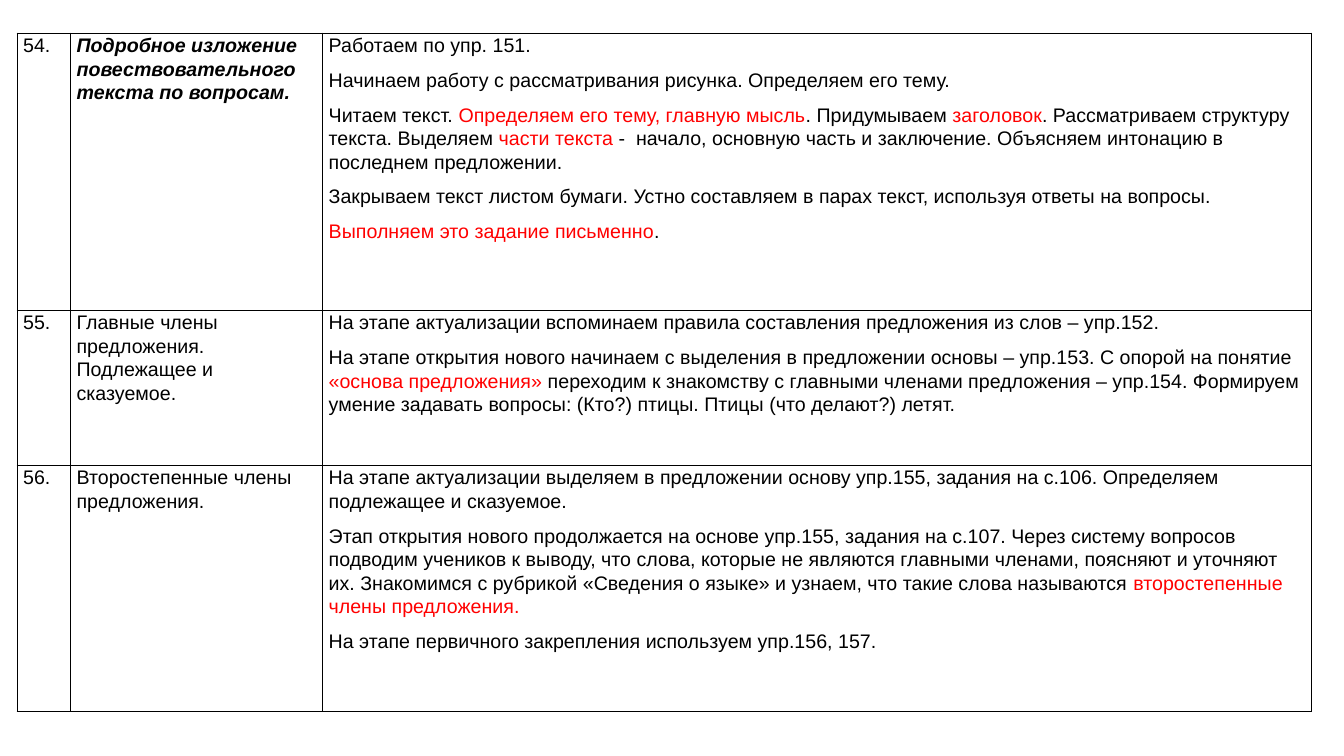
"""Build a slide with a three-row table of Russian lesson notes."""
import pptx
import pptx.dml.color
import pptx.oxml
import pptx.oxml.ns
import pptx.util
from pptx.util import Inches

BLACK = pptx.dml.color.RGBColor(0x00, 0x00, 0x00)
RED = pptx.dml.color.RGBColor(0xFF, 0x00, 0x00)
KEY_MARK = "|"

LESSONS = [
    ("54.", "Подробное изложение повествовательного текста по вопросам.", [
        "Работаем по упр. 151.",
        "Начинаем работу с рассматривания рисунка. Определяем его тему.",
        "Читаем текст. |Определяем его тему, главную мысль|. Придумываем |заголовок|. "
        "Рассматриваем структуру текста. Выделяем |части текста |-  начало, основную часть "
        "и заключение. Объясняем интонацию в последнем предложении.",
        "Закрываем текст листом бумаги. Устно составляем в парах текст, "
        "используя ответы на вопросы.",
        "|Выполняем это задание письменно|.",
    ]),
    ("55.", "Главные члены предложения. Подлежащее и сказуемое.", [
        "На этапе актуализации вспоминаем правила составления предложения из слов – упр.152.",
        "На этапе открытия нового начинаем с выделения в предложении основы – упр.153. "
        "С опорой на понятие |«основа предложения»| переходим к знакомству с главными "
        "членами предложения – упр.154. Формируем умение задавать вопросы: "
        "(Кто?) птицы. Птицы (что делают?) летят.",
    ]),
    ("56.", "Второстепенные члены предложения.", [
        "На этапе актуализации выделяем в предложении основу упр.155, задания на с.106. "
        "Определяем подлежащее и сказуемое.",
        "Этап открытия нового продолжается на основе упр.155, задания на с.107. "
        "Через систему вопросов подводим учеников к выводу, что слова, которые не являются "
        "главными членами, поясняют и уточняют их. Знакомимся с рубрикой «Сведения о языке» "
        "и узнаем, что такие слова называются |второстепенные члены предложения.",
        "На этапе первичного закрепления используем упр.156, 157.",
    ]),
]
COL_WIDTHS = [0.53, 2.5, 9.81]
ROW_HEIGHTS = [2.75, 1.54, 2.44]
CELL_FORMAT = {
    "margin_left": Inches(0.06), "margin_right": Inches(0.06),
    "margin_top": 0, "margin_bottom": 0,
}
PARAGRAPH_FORMAT = {"line_spacing": 1.07, "space_after": pptx.util.Pt(8)}
FONT_FORMAT = {"name": "Arial", "size": pptx.util.Pt(14)}


def add_borders(cell):
    """Draw a thin black line on each side of a cell."""
    tc_pr = cell._tc.get_or_add_tcPr()
    for side in ("lnL", "lnR", "lnT", "lnB"):
        tc_pr.append(pptx.oxml.parse_xml(
            f'<a:{side} {pptx.oxml.ns.nsdecls("a")} w="12700"><a:solidFill>'
            f'<a:srgbClr val="{BLACK}"/></a:solidFill></a:{side}>'))


def write_cell(cell, paragraphs, emphasis):
    """Fill a cell, colouring the text between key marks red."""
    for name, value in CELL_FORMAT.items():
        setattr(cell, name, value)
    add_borders(cell)
    cell.fill.background()
    tf = cell.text_frame
    for i, text in enumerate(paragraphs):
        p = tf.add_paragraph() if i else tf.paragraphs[0]
        for name, value in PARAGRAPH_FORMAT.items():
            setattr(p, name, value)
        for j, part in enumerate(text.split(KEY_MARK)):
            if not part:
                continue
            r = p.add_run()
            r.text = part
            for name, value in FONT_FORMAT.items():
                setattr(r.font, name, value)
            r.font.bold = r.font.italic = emphasis
            r.font.color.rgb = RED if j % 2 else BLACK


prs = pptx.Presentation()
prs.slide_width, prs.slide_height = Inches(13.33), Inches(7.5)
s = prs.slides.add_slide(prs.slide_layouts[6])

table = s.shapes.add_table(
    len(ROW_HEIGHTS), len(COL_WIDTHS), Inches(0.17), Inches(0.33),
    Inches(sum(COL_WIDTHS)), Inches(sum(ROW_HEIGHTS))).table
table.first_row = table.horz_banding = False
for column, width in zip(table.columns, COL_WIDTHS):
    column.width = Inches(width)
for row, height in zip(table.rows, ROW_HEIGHTS):
    row.height = Inches(height)

for i, (number, topic, notes) in enumerate(LESSONS):
    write_cell(table.cell(i, 0), [number], False)
    write_cell(table.cell(i, 1), [topic], i == 0)
    write_cell(table.cell(i, 2), notes, False)

prs.save("out.pptx")
